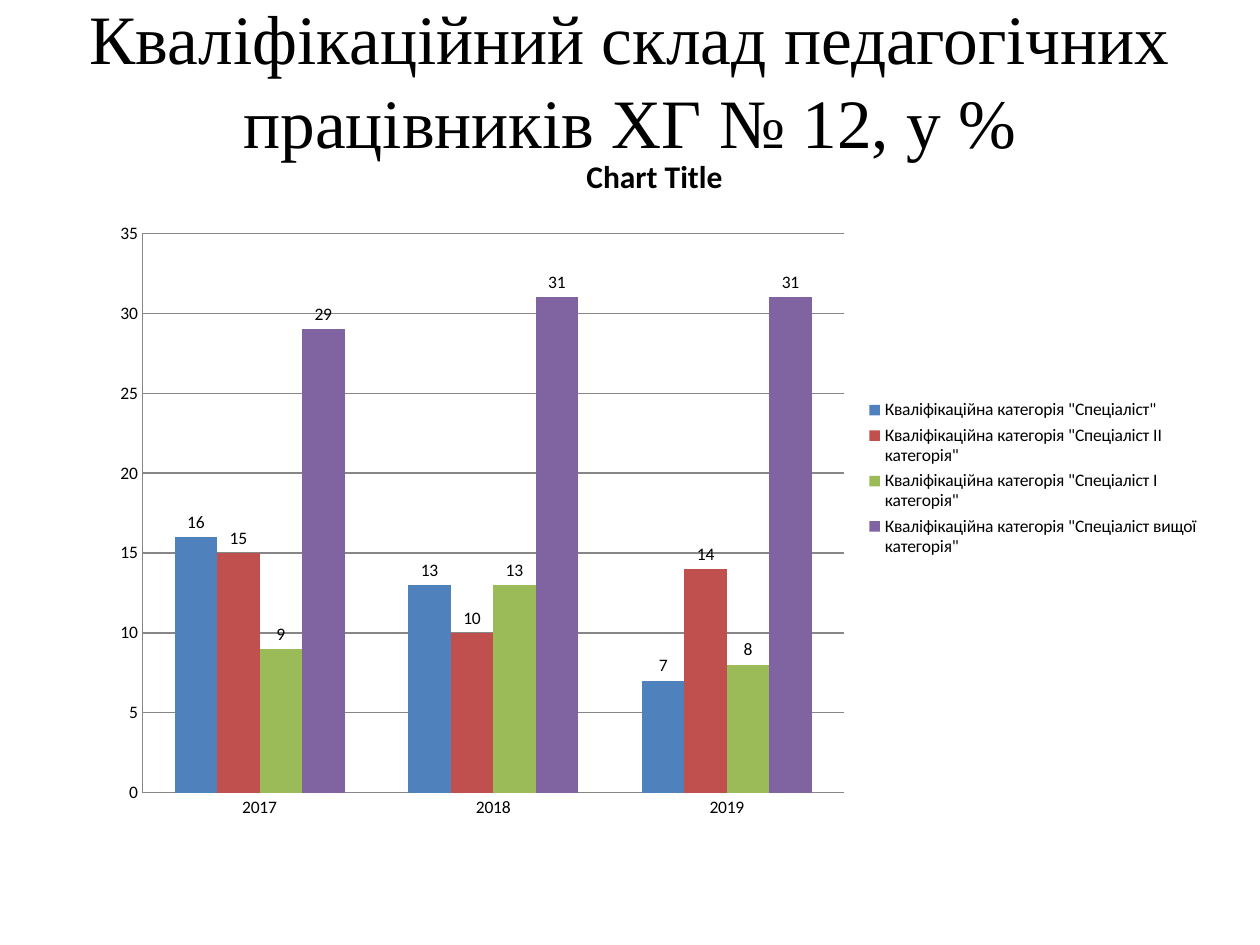
"""Build a slide with a clustered column chart of teacher grades by year."""
from dataclasses import dataclass
from lxml.etree import SubElement
from pptx import Presentation
from pptx.chart.data import CategoryChartData
from pptx.dml.color import RGBColor
from pptx.enum.chart import XL_CHART_TYPE, XL_LABEL_POSITION, XL_LEGEND_POSITION, XL_TICK_MARK
from pptx.enum.text import MSO_ANCHOR, PP_ALIGN
from pptx.oxml.ns import qn
from pptx.util import Inches, Pt


@dataclass
class Theme:
    ink: str = "000000"
    grid: str = "878787"
    bars: tuple = ("4F81BD", "C0504D", "9BBB59", "8064A2")
    serif: str = "Times New Roman"
    sans: str = "Calibri"
    head: float = 39.6
    title: float = 18
    body: float = 10


def style(font, name, size, bold=False):
    font.name, font.size, font.bold = name, Pt(size), bold
    font.color.rgb = RGBColor.from_string(look.ink)


def place(node, index, inner, shares):
    for old in node.findall(qn("c:layout")):
        node.remove(old)
    layout = SubElement(node, qn("c:layout"))
    node.insert(index, layout)
    manual = SubElement(layout, qn("c:manualLayout"))
    rules = [("layoutTarget", "inner")] if inner else []
    rules += [("xMode", "edge"), ("yMode", "edge")]
    for tag, value in rules + list(zip("xywh", shares)):
        SubElement(manual, qn("c:" + tag)).set("val", str(value))


look = Theme()
deck = Presentation()
deck.slide_width, deck.slide_height = Inches(10), Inches(7.5)
wide, high = deck.slide_width, deck.slide_height
slide = deck.slides.add_slide(deck.slide_layouts[6])

box = slide.shapes.add_textbox(int(wide * 0.05), int(high * 0.04), int(wide * 0.9), int(high / 6))
frame = box.text_frame
frame.word_wrap = True
frame.vertical_anchor = MSO_ANCHOR.MIDDLE
frame.margin_bottom = Inches(0.65)
line = frame.paragraphs[0]
line.alignment = PP_ALIGN.CENTER
run = line.add_run()
run.text = "Кваліфікаційний склад педагогічних працівників ХГ № 12, у %"
style(run.font, look.serif, look.head)

grades = {
    "Спеціаліст": (16, 13, 7),
    "Спеціаліст ІІ категорія": (15, 10, 14),
    "Спеціаліст І категорія": (9, 13, 8),
    "Спеціаліст вищої категорія": (29, 31, 31),
}
data = CategoryChartData()
data.categories = ["2017", "2018", "2019"]
for grade, values in grades.items():
    data.add_series(f'Кваліфікаційна категорія "{grade}"', values)

chart = slide.shapes.add_chart(
    XL_CHART_TYPE.COLUMN_CLUSTERED,
    Inches(0.78), Inches(1.02), Inches(8.83), Inches(5.55), data,
).chart
style(chart.font, look.sans, look.body)
chart.has_title = True
run = chart.chart_title.text_frame.paragraphs[0].add_run()
run.text = "Chart Title"
style(run.font, look.sans, look.title, True)

chart.has_legend = True
legend = chart.legend
legend.position = XL_LEGEND_POSITION.RIGHT
legend.include_in_layout = False
style(legend.font, look.sans, look.body)
place(legend._element, 1, False, (0.69, 0.38, 0.3, 0.24))

plot = chart.plots[0]
plot.vary_by_categories = False
plot.gap_width, plot.overlap = 150, 0
place(plot._element.getparent(), 0, True, (0.04, 0.15, 0.63, 0.8))
for rank, (series, color) in enumerate(zip(plot.series, look.bars)):
    series.format.fill.solid()
    series.format.fill.fore_color.rgb = RGBColor.from_string(color)
    if rank == 0:
        for spot in range(len(series.values)):
            series.points[spot].data_label.position = XL_LABEL_POSITION.OUTSIDE_END
    else:
        labels = series.data_labels
        labels.show_value = True
        labels.position = XL_LABEL_POSITION.OUTSIDE_END
        style(labels.font, look.sans, look.body)

scale = chart.value_axis
scale.minimum_scale, scale.maximum_scale, scale.major_unit = 0, 35, 5
scale.has_major_gridlines = True
for axis in (chart.category_axis, scale):
    axis.major_tick_mark = axis.minor_tick_mark = XL_TICK_MARK.NONE
    style(axis.tick_labels.font, look.sans, look.body)
for part in (chart.category_axis, scale, scale.major_gridlines):
    part.format.line.color.rgb = RGBColor.from_string(look.grid)
    part.format.line.width = Pt(0.75)

deck.save("out.pptx")
